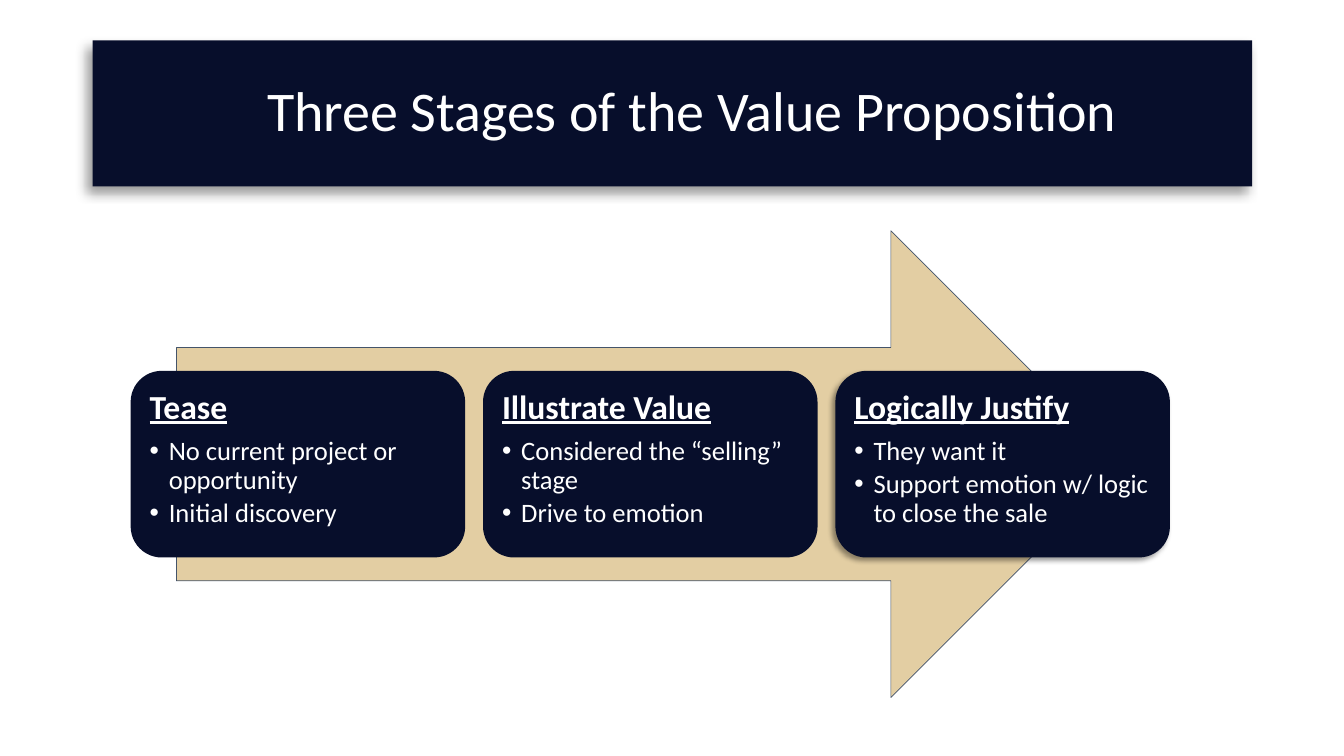
from lxml.etree import SubElement
from pptx import Presentation
from pptx.dml.color import RGBColor
from pptx.enum.shapes import MSO_SHAPE
from pptx.enum.text import MSO_ANCHOR, PP_ALIGN
from pptx.oxml.ns import qn
from pptx.util import Inches, Pt

NAVY, SAND, SLATE, WHITE = "070E2B", "E3CEA3", "44546A", "FFFFFF"
STAGES = [
    ("Tease", ["No current project or opportunity", "Initial discovery"]),
    ("Illustrate Value", ["Considered the “selling” stage", "Drive to emotion"]),
    ("Logically Justify", ["They want it", "Support emotion w/ logic to close the sale"]),
]
HEADING = {"size": Pt(24), "bold": True, "underline": True}
BULLET = {"size": Pt(19)}


def color(value):
    return RGBColor.from_string(value)


def add_block(s, kind, box, fill):
    sp = s.shapes.add_shape(kind, *map(Inches, box))
    sp.shadow.inherit = False
    sp.fill.solid()
    sp.fill.fore_color.rgb = color(fill)
    sp.line.fill.background()
    return sp


def add_shadow(sp, blur, dist):
    """Cast a soft 40% black shadow down and to the left; sizes in points."""
    effects = sp._element.spPr.find(qn("a:effectLst"))
    shadow = SubElement(effects, qn("a:outerShdw"), blurRad=str(Pt(blur)),
                        dist=str(Pt(dist)), dir="8100000", algn="tr", rotWithShape="0")
    black = SubElement(shadow, qn("a:srgbClr"), val="000000")
    SubElement(black, qn("a:alpha"), val="40000")


def write(p, text, **fmt):
    p.line_spacing = 0.9
    r = p.add_run()
    r.text = text
    r.font.color.rgb = color(WHITE)
    for key, value in {"name": "Calibri", **fmt}.items():
        setattr(r.font, key, value)


def set_bullet(p):
    pPr = p._p.get_or_add_pPr()
    pPr.set("marL", str(Inches(0.19)))
    pPr.set("indent", str(Inches(-0.19)))
    SubElement(pPr, qn("a:buFont"), typeface="Arial")
    SubElement(pPr, qn("a:buChar"), char="•")


def set_frame(tf, anchor, margin_left=0.1):
    margins = {f"margin_{side}": Inches(0.1) for side in ("top", "right", "bottom")}
    fmt = {"word_wrap": True, "vertical_anchor": anchor,
           "margin_left": Inches(margin_left), **margins}
    for key, value in fmt.items():
        setattr(tf, key, value)


def add_title(s, box, text):
    sp = add_block(s, MSO_SHAPE.RECTANGLE, box, NAVY)
    add_shadow(sp, 8, 6)
    set_frame(sp.text_frame, MSO_ANCHOR.MIDDLE, margin_left=0.48)
    p = sp.text_frame.paragraphs[0]
    p.alignment = PP_ALIGN.CENTER
    write(p, text, size=Pt(40))


def add_stage(s, box, heading, bullets):
    sp = add_block(s, MSO_SHAPE.ROUNDED_RECTANGLE, box, NAVY)
    tf = sp.text_frame
    set_frame(tf, MSO_ANCHOR.TOP)
    p = tf.paragraphs[0]
    p.alignment = PP_ALIGN.LEFT
    p.space_after = Pt(8.4)
    write(p, heading, **HEADING)
    for text in bullets:
        p = tf.add_paragraph()
        p.alignment = PP_ALIGN.LEFT
        p.space_after = Pt(2.85)
        write(p, text, **BULLET)
        set_bullet(p)
    return sp


def add_process(s, box, stages):
    """Draw the arrow and a row of stage cards across its shaft."""
    x, y, w, h = box
    arrow_w = 0.85 * w
    arrow = add_block(s, MSO_SHAPE.RIGHT_ARROW, (x + (w - arrow_w) / 2, y, arrow_w, h), SAND)
    arrow.line.color.rgb = color(SLATE)
    arrow.line.width = Pt(0.5)
    card_w, card_h, pitch = 0.3 * w, 0.4 * h, 3.495
    left = x + (w - card_w - pitch * (len(stages) - 1)) / 2
    top = y + (h - card_h) / 2
    for i, (heading, bullets) in enumerate(stages):
        card = add_stage(s, (left + i * pitch, top, card_w, card_h), heading, bullets)
    add_shadow(card, 4, 3)


def main():
    prs = Presentation()
    prs.slide_width, prs.slide_height = Inches(13.33), Inches(7.5)
    s = prs.slides.add_slide(prs.slide_layouts[6])
    add_process(s, (0.92, 2.29, 11.06, 4.63), STAGES)
    add_title(s, (0.92, 0.4, 11.5, 1.45), "Three Stages of the Value Proposition")
    prs.save("out.pptx")


if __name__ == "__main__":
    main()
